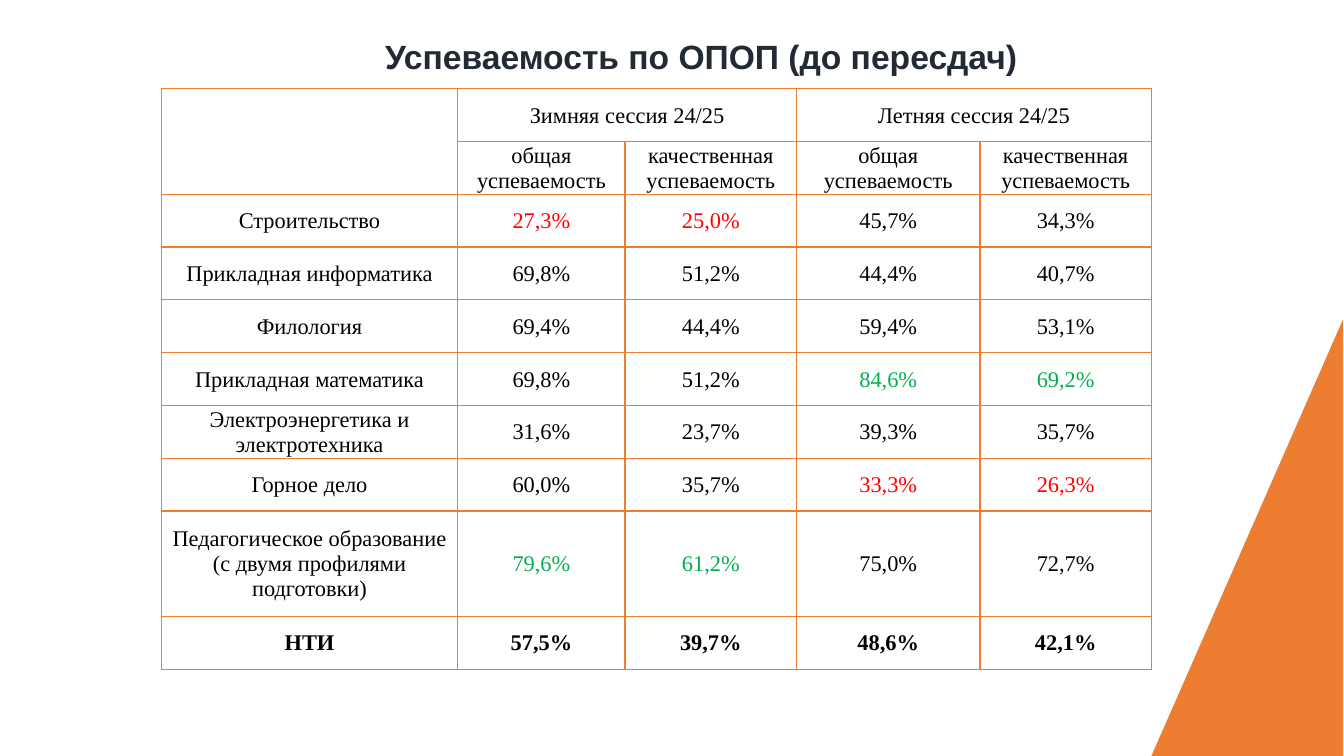
from dataclasses import dataclass

from lxml.etree import SubElement
from pptx import Presentation
from pptx.dml.color import RGBColor
from pptx.enum.shapes import MSO_SHAPE
from pptx.enum.text import MSO_ANCHOR, PP_ALIGN
from pptx.oxml.ns import qn
from pptx.slide import Slide
from pptx.table import Table, _Cell
from pptx.text.text import TextFrame
from pptx.util import Inches, Pt

ORANGE = RGBColor(0xED, 0x7D, 0x31)
NAVY = RGBColor(0x22, 0x2A, 0x35)
BLACK = RGBColor(0x00, 0x00, 0x00)
RED = RGBColor(0xFF, 0x00, 0x00)
GREEN = RGBColor(0x00, 0xB0, 0x50)

COLUMN_WIDTHS = (2.94, 1.66, 1.7, 1.82, 1.7)
TABLE_HEIGHT = 5.76
HEADER_ROWS = 2
SESSIONS = ("Зимняя сессия 24/25", "Летняя сессия 24/25")
MEASURES = ("общая успеваемость", "качественная успеваемость")


@dataclass(frozen=True)
class Programme:
    name: str
    winter: tuple[str, str]
    summer: tuple[str, str]
    winter_color: RGBColor = BLACK
    summer_color: RGBColor = BLACK
    bold: bool = False
    height_units: int = 1


PROGRAMMES = (
    Programme("Строительство", ("27,3%", "25,0%"), ("45,7%", "34,3%"), winter_color=RED),
    Programme("Прикладная информатика", ("69,8%", "51,2%"), ("44,4%", "40,7%")),
    Programme("Филология", ("69,4%", "44,4%"), ("59,4%", "53,1%")),
    Programme("Прикладная математика", ("69,8%", "51,2%"), ("84,6%", "69,2%"), summer_color=GREEN),
    Programme("Электроэнергетика и электротехника", ("31,6%", "23,7%"), ("39,3%", "35,7%")),
    Programme("Горное дело", ("60,0%", "35,7%"), ("33,3%", "26,3%"), summer_color=RED),
    Programme(
        "Педагогическое образование (с двумя профилями подготовки)",
        ("79,6%", "61,2%"),
        ("75,0%", "72,7%"),
        winter_color=GREEN,
        height_units=2,
    ),
    Programme("НТИ", ("57,5%", "39,7%"), ("48,6%", "42,1%"), bold=True),
)


def write_text(
    text_frame: TextFrame, text: str, font_name: str, size: int, color: RGBColor, bold: bool
) -> None:
    text_frame.text = text
    paragraph = text_frame.paragraphs[0]
    paragraph.alignment = PP_ALIGN.CENTER
    for run in paragraph.runs:
        run.font.name = font_name
        run.font.size = Pt(size)
        run.font.bold = bold
        run.font.color.rgb = color


def fill_cell(cell: _Cell, text: str, color: RGBColor = BLACK, bold: bool = False) -> None:
    write_text(cell.text_frame, text, "Times New Roman", 16, color, bold)


def style_cell(cell: _Cell) -> None:
    cell.vertical_anchor = MSO_ANCHOR.MIDDLE
    cell.margin_left = cell.margin_right = cell.margin_top = Inches(0.01)
    cell.margin_bottom = Inches(0)
    properties = cell._tc.get_or_add_tcPr()
    for side in ("a:lnL", "a:lnR", "a:lnT", "a:lnB"):
        line = SubElement(properties, qn(side), w=str(Pt(1)))
        solid_fill = SubElement(line, qn("a:solidFill"))
        SubElement(solid_fill, qn("a:srgbClr"), val=str(ORANGE))
    cell.fill.background()


def fill_header(table: Table) -> None:
    table.cell(0, 0).merge(table.cell(1, 0))
    for session_index, session in enumerate(SESSIONS):
        first_column = 1 + session_index * len(MEASURES)
        session_cell = table.cell(0, first_column)
        session_cell.merge(table.cell(0, first_column + len(MEASURES) - 1))
        fill_cell(session_cell, session)
        for offset, measure in enumerate(MEASURES):
            fill_cell(table.cell(1, first_column + offset), measure)


def fill_programme(table: Table, row: int, programme: Programme) -> None:
    fill_cell(table.cell(row, 0), programme.name, bold=programme.bold)
    results = [(value, programme.winter_color) for value in programme.winter]
    results += [(value, programme.summer_color) for value in programme.summer]
    for column, (value, color) in enumerate(results, start=1):
        fill_cell(table.cell(row, column), value, color, programme.bold)


def add_results_table(slide: Slide) -> None:
    table = slide.shapes.add_table(
        HEADER_ROWS + len(PROGRAMMES),
        len(COLUMN_WIDTHS),
        Inches(1.6),
        Inches(0.88),
        Inches(sum(COLUMN_WIDTHS)),
        Inches(TABLE_HEIGHT),
    ).table
    table.first_row = False
    table.horz_banding = False
    for column, width in zip(table.columns, COLUMN_WIDTHS):
        column.width = Inches(width)
    height_units = [1] * HEADER_ROWS + [programme.height_units for programme in PROGRAMMES]
    for row, units in zip(table.rows, height_units):
        row.height = Inches(TABLE_HEIGHT * units / sum(height_units))
    for cell in table.iter_cells():
        style_cell(cell)
    fill_header(table)
    for row_index, programme in enumerate(PROGRAMMES, start=HEADER_ROWS):
        fill_programme(table, row_index, programme)


def add_title(slide: Slide) -> None:
    title = slide.shapes.add_textbox(Inches(2.19), Inches(0.31), Inches(9.53), Inches(0.52))
    title.text_frame.word_wrap = True
    write_text(title.text_frame, "Успеваемость по ОПОП (до пересдач)", "Arial", 24, NAVY, True)


def add_corner_triangle(slide: Slide) -> None:
    triangle = slide.shapes.add_shape(
        MSO_SHAPE.ISOSCELES_TRIANGLE, Inches(11.42), Inches(3.17), Inches(1.9), Inches(4.33)
    )
    triangle.adjustments[0] = 1
    triangle.shadow.inherit = False
    triangle.fill.solid()
    triangle.fill.fore_color.rgb = ORANGE
    triangle.line.fill.background()


def main() -> None:
    presentation = Presentation()
    presentation.slide_width = Inches(13.33)
    presentation.slide_height = Inches(7.5)
    slide = presentation.slides.add_slide(presentation.slide_layouts[6])
    add_results_table(slide)
    add_title(slide)
    add_corner_triangle(slide)
    presentation.save("out.pptx")


if __name__ == "__main__":
    main()
